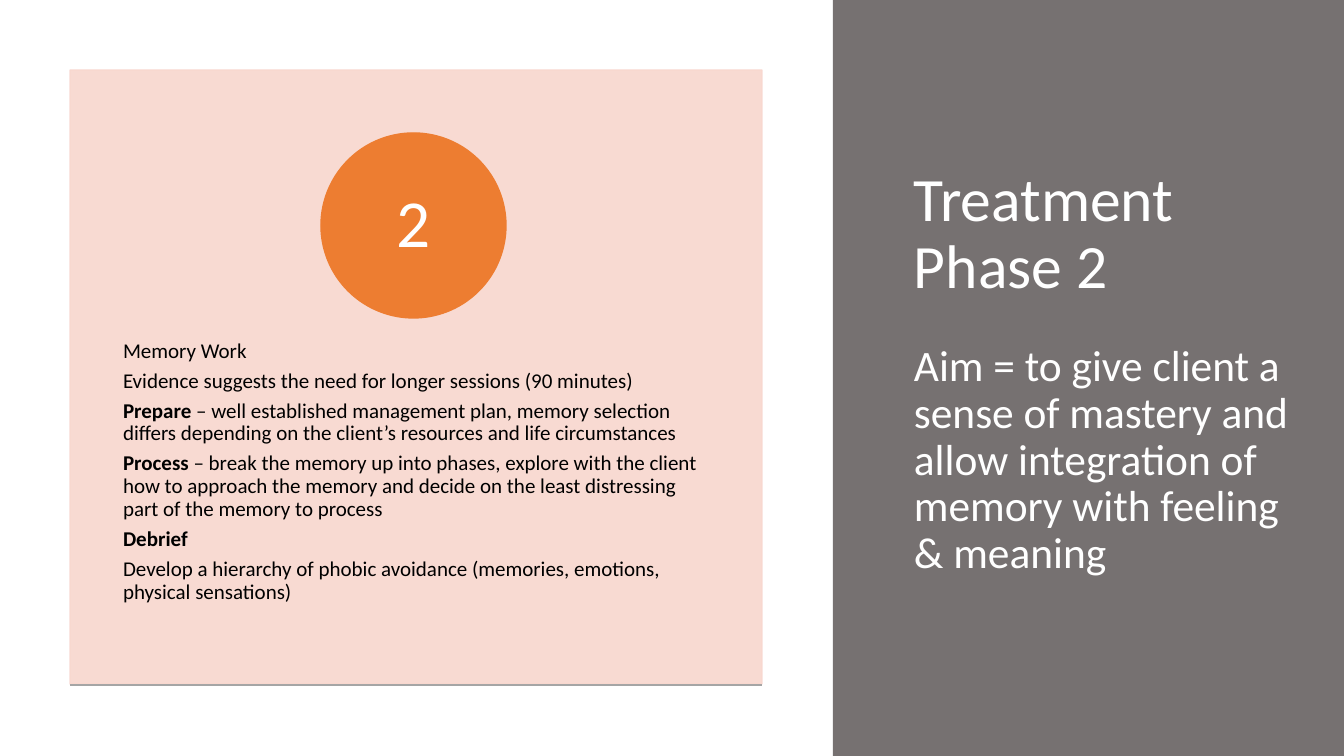
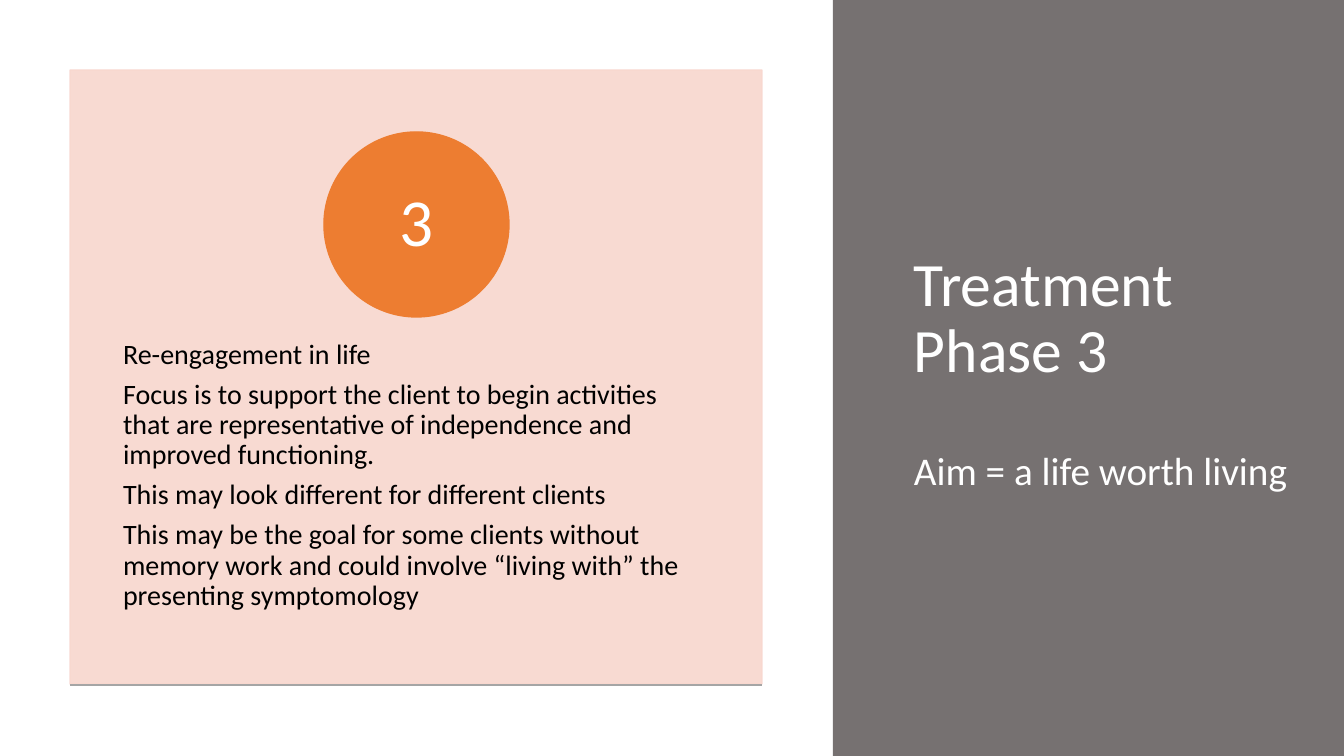
from dataclasses import dataclass

from lxml.etree import SubElement
from pptx import Presentation
from pptx.dml.color import RGBColor
from pptx.enum.shapes import MSO_CONNECTOR as Connector, MSO_SHAPE as Preset
from pptx.enum.text import MSO_ANCHOR as Anchor, MSO_AUTO_SIZE as AutoSize, PP_ALIGN as Align
from pptx.oxml.ns import qn
from pptx.util import Pt

PHASES = [
    {
        "number": "2",
        "aim": "Aim = to give client a sense of mastery and allow integration of memory with feeling & meaning",
        "aim_size": 31,
        "aim_gap": 30,
        "body_size": 15,
        "circle": (321, 133),
        "body": [
            ("", "Memory Work"),
            ("", "Evidence suggests the need for longer sessions (90 minutes)"),
            ("Prepare", " – well established management plan, memory selection differs "
                        "depending on the client’s resources and life circumstances"),
            ("Process", " – break the memory up into phases, explore with the client how to "
                        "approach the memory and decide on the least distressing part of the "
                        "memory to process"),
            ("Debrief", ""),
            ("", "Develop a hierarchy of phobic avoidance (memories, emotions, physical sensations)"),
        ],
    },
    {
        "number": "3",
        "aim": "Aim = a life worth living",
        "aim_size": 28,
        "aim_gap": 47,
        "body_size": 20,
        "circle": (324, 132),
        "body": [
            ("", "Re-engagement in life"),
            ("", "Focus is to support the client to begin activities that are representative "
                 "of independence and improved functioning."),
            ("", "This may look different for different clients"),
            ("", "This may be the goal for some clients without memory work and could involve "
                 "“living with” the presenting symptomology"),
        ],
    },
]

SLIDE = (1344, 756)
BAND = (833, 0, 511, 756)
PANEL = (70, 70, 692, 614)
TITLE = (904, 70, 404, 607)
BODY = (70, 304, 692, 369)
RULE_Y = 685
CIRCLE_SIZE = 185


@dataclass(frozen=True)
class Theme:
    """Colours, font and type sizes of the deck."""
    font: str = "Calibri"
    white: str = "FFFFFF"
    black: str = "000000"
    band: str = "767171"
    panel: str = "F8D7CE"
    circle: str = "ED7D31"
    rule: str = "A5A5A5"
    title_size: int = 44
    number_size: int = 48
    line_spacing: float = 0.9
    space_ratio: float = 0.35
    panel_opacity: int = 90


THEME = Theme()


def px(length):
    """Turn pixels into EMU."""
    return round(length * 12192000 / SLIDE[0])


def assign(target, values):
    """Set attributes from a dict."""
    for name, value in values.items():
        setattr(target, name, value)


def place(shape, box):
    """Move and size a shape to a pixel box."""
    assign(shape, dict(zip(("left", "top", "width", "height"), map(px, box))))


def add_block(slide, preset, box, color):
    """Draw a filled preset shape with an outline of its own colour."""
    shape = slide.shapes.add_shape(preset, *map(px, box))
    shape.shadow.inherit = False
    shape.fill.solid()
    shape.fill.fore_color.rgb = RGBColor.from_string(color)
    shape.line.color.rgb = RGBColor.from_string(color)
    shape.line.width = Pt(1)
    return shape


def set_frame(shape, anchor, insets=(10, 5)):
    """Prepare a text frame and return it."""
    frame = shape.text_frame
    horizontal, vertical = map(px, insets)
    assign(frame, {
        "word_wrap": True, "auto_size": AutoSize.NONE, "vertical_anchor": anchor,
        "margin_left": horizontal, "margin_right": horizontal,
        "margin_top": vertical, "margin_bottom": vertical,
    })
    return frame


def write(frame, index, runs, size, color, align=Align.LEFT, before=0, after=0):
    """Write a paragraph of (text, bold) runs."""
    paragraph = frame.add_paragraph() if index else frame.paragraphs[0]
    assign(paragraph, {
        "alignment": align, "line_spacing": THEME.line_spacing,
        "space_before": Pt(before), "space_after": Pt(after),
    })
    for text, bold in runs:
        if text:
            run = paragraph.add_run()
            run.text = text
            assign(run.font, {"name": THEME.font, "size": Pt(size), "bold": bold})
            run.font.color.rgb = RGBColor.from_string(color)
    return paragraph


def add_backdrop(slide):
    """Draw the band, panel and rule behind the placeholders."""
    band = add_block(slide, Preset.RECTANGLE, BAND, THEME.band)
    band.line.fill.background()
    panel = add_block(slide, Preset.RECTANGLE, PANEL, THEME.panel)
    for color in panel.element.iter(qn("a:srgbClr")):
        SubElement(color, qn("a:alpha"), val=str(THEME.panel_opacity * 1000))
    left, _, width, _ = PANEL
    rule = slide.shapes.add_connector(
        Connector.STRAIGHT, px(left), px(RULE_Y), px(left + width), px(RULE_Y))
    rule.line.color.rgb = RGBColor.from_string(THEME.rule)
    rule.line.width = Pt(1)
    SubElement(rule.element.spPr, qn("a:effectLst"))
    for index, shape in enumerate((band, panel, rule), start=2):
        slide.shapes.element.insert(index, shape.element)


def fill_title(title, phase):
    """Write the heading and the aim."""
    place(title, TITLE)
    frame = set_frame(title, Anchor.MIDDLE)
    heading = f"Treatment Phase {phase['number']}"
    write(frame, 0, [(heading, False)], THEME.title_size, THEME.white)
    write(frame, 1, [(phase["aim"], False)], phase["aim_size"], THEME.white,
          before=phase["aim_gap"])


def fill_body(body, phase):
    """Write the list without bullets."""
    place(body, BODY)
    frame = set_frame(body, Anchor.TOP, (53, 36))
    size = phase["body_size"]
    for index, (lead, text) in enumerate(phase["body"]):
        paragraph = write(frame, index, [(lead, True), (text, False)], size,
                          THEME.black, after=size * THEME.space_ratio)
        properties = paragraph._p.get_or_add_pPr()
        properties.set("marL", "0")
        properties.set("indent", "0")
        SubElement(properties, qn("a:buNone"))


def add_number(slide, phase):
    """Draw the numbered circle."""
    box = (*phase["circle"], CIRCLE_SIZE, CIRCLE_SIZE)
    circle = add_block(slide, Preset.OVAL, box, THEME.circle)
    frame = set_frame(circle, Anchor.MIDDLE, (14, 1))
    write(frame, 0, [(phase["number"], False)], THEME.number_size, THEME.white, Align.CENTER)


def main():
    """Build and save the deck."""
    presentation = Presentation()
    presentation.slide_width, presentation.slide_height = map(px, SLIDE)
    for phase in PHASES:
        slide = presentation.slides.add_slide(presentation.slide_layouts[1])
        add_backdrop(slide)
        fill_title(slide.shapes.title, phase)
        fill_body(slide.placeholders[1], phase)
        add_number(slide, phase)
    presentation.save("out.pptx")


if __name__ == "__main__":
    main()
